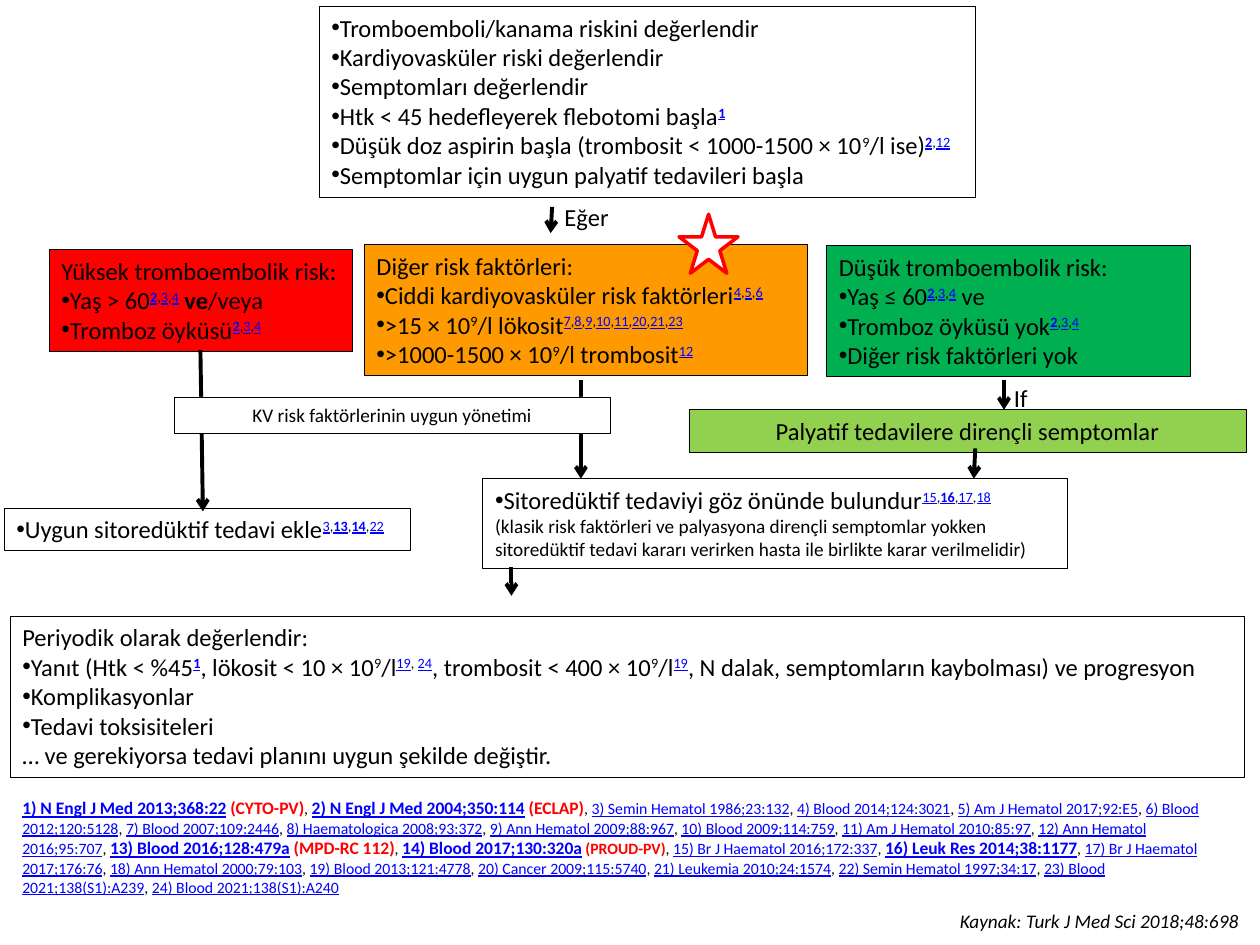
from dataclasses import dataclass

from lxml import etree
from pptx import Presentation
from pptx.dml.color import RGBColor
from pptx.enum.shapes import MSO_CONNECTOR, MSO_SHAPE
from pptx.enum.text import MSO_ANCHOR, MSO_AUTO_SIZE, PP_ALIGN
from pptx.oxml.ns import qn
from pptx.util import Cm, Pt

RECT, STAR = MSO_SHAPE.RECTANGLE, MSO_SHAPE.STAR_5_POINT
STRAIGHT = MSO_CONNECTOR.STRAIGHT
TOP, GROW = MSO_ANCHOR.TOP, MSO_AUTO_SIZE.SHAPE_TO_FIT_TEXT
LEFT, CENTER = PP_ALIGN.LEFT, PP_ALIGN.CENTER

BLACK = RGBColor(0x00, 0x00, 0x00)
WHITE = RGBColor(0xFF, 0xFF, 0xFF)
RED = RGBColor(0xFF, 0x00, 0x00)
ORANGE = RGBColor(0xFF, 0x99, 0x00)
GREEN = RGBColor(0x00, 0xB0, 0x50)
LIGHT_GREEN = RGBColor(0x92, 0xD0, 0x50)
BLUE = RGBColor(0x00, 0x00, 0xFF)

FONT = "Calibri"
BODY, SMALL = 14, 11


@dataclass
class Line:
    """Text split by |: ^ starts a superscript, @ citations, * bold text."""
    text: str
    bullet: bool = True
    size: float = BODY


@dataclass
class Box:
    at: tuple[float, float, float, float]
    lines: list[Line]
    fill: RGBColor | None = WHITE
    align: PP_ALIGN = LEFT
    wrap: bool = True
    italic: bool = False


@dataclass
class Reference:
    text: str
    key: bool = False
    trial: str = ""
    trial_size: float = 10


BOXES = [
    Box((0.08, 10.24, 8.2, 0.86),
        [Line("Uygun sitoredüktif tedavi ekle|@3,13*,14*,22")], wrap=False),
    Box((0.99, 5.03, 6.12, 2.06),
        [Line("Yüksek tromboembolik risk:", False),
         Line("Yaş > 60|@2*,3,4|* ve|/veya"),
         Line("Tromboz öyküsü|@2*,3,4")], RED, wrap=False),
    Box((16.66, 4.95, 7.34, 2.64),
        [Line("Düşük tromboembolik risk:", False),
         Line("Yaş ≤ 60|@2*,3,4| ve"),
         Line("Tromboz öyküsü yok|@2*,3,4"),
         Line("Diğer risk faktörleri yok")], GREEN),
    Box((7.34, 4.93, 8.94, 2.64),
        [Line("Diğer risk faktörleri:", False),
         Line("Ciddi kardiyovasküler risk faktörleri|@4,5,6"),
         Line(">15 × 10|^9|/l lökosit|@7,8,9,10,11,20,21,23"),
         Line(">1000-1500 × 10|^9|/l trombosit|@12")], ORANGE),
    Box((13.89, 8.26, 11.23, 0.86),
        [Line("Palyatif tedavilere dirençli semptomlar", False)],
        LIGHT_GREEN, CENTER),
    Box((6.43, 0.13, 13.23, 3.84),
        [Line("Tromboemboli/kanama riskini değerlendir"),
         Line("Kardiyovasküler riski değerlendir"),
         Line("Semptomları değerlendir"),
         Line("Htk < 45 hedefleyerek flebotomi başla|@1*"),
         Line("Düşük doz aspirin başla (trombosit < 1000-1500 × 10|^9|/l ise)|@2*,12"),
         Line("Semptomlar için uygun palyatif tedavileri başla")], wrap=False),
    Box((11.13, 3.94, 1.42, 0.86), [Line("Eğer", False)], None, wrap=False),
    Box((20.19, 7.59, 0.79, 0.86), [Line("If", False)], None, wrap=False),
    Box((0.2, 12.42, 24.89, 3.25),
        [Line("Periyodik olarak değerlendir:", False),
         Line("Yanıt (Htk < %45|@1*|, lökosit < 10 × 10|^9|/l|@19, 24|"
              ", trombosit < 400 × 10|^9|/l|@19|"
              ", N dalak, semptomların kaybolması) ve progresyon"),
         Line("Komplikasyonlar"),
         Line("Tedavi toksisiteleri"),
         Line("… ve gerekiyorsa tedavi planını uygun şekilde değiştir.", False)]),
    Box((9.73, 9.65, 11.79, 1.8),
        [Line("Sitoredüktif tedaviyi göz önünde bulundur|@15,16*,17,18"),
         Line("(klasik risk faktörleri ve palyasyona dirençli semptomlar yokken "
              "sitoredüktif tedavi kararı verirken hasta ile birlikte karar "
              "verilmelidir)", False, SMALL)]),
    Box((19.1, 18.21, 6.22, 0.74),
        [Line("Kaynak: Turk J Med Sci 2018;48:698", False, SMALL)],
        None, wrap=False, italic=True),
]
MANAGEMENT = Box((3.51, 8, 8.79, 0.74),
                 [Line("KV risk faktörlerinin uygun yönetimi", False, SMALL)],
                 align=CENTER)
REFERENCE_BOX = Box((0.2, 15.95, 24.61, 2.31), [], None)

ARROWS = [
    (4.04, 7.06, 4.09, 10.31),
    (11.13, 4.17, 11.1, 4.7),
    (20.24, 7.67, 20.24, 8.26),
    (10.31, 11.43, 10.31, 12.01),
    (19.66, 9.04, 19.63, 9.65),
    (11.71, 7.67, 11.71, 9.65),
]
STAR_AT = (13.69, 4.32, 1.19, 1.19)

REFERENCES = [
    Reference("N Engl J Med 2013;368:22", True, "CYTO-PV"),
    Reference("N Engl J Med 2004;350:114", True, "ECLAP"),
    Reference("Semin Hematol 1986;23:132"),
    Reference("Blood 2014;124:3021"),
    Reference("Am J Hematol 2017;92:E5"),
    Reference("Blood 2012;120:5128"),
    Reference("Blood 2007;109:2446"),
    Reference("Haematologica 2008;93:372"),
    Reference("Ann Hematol 2009;88:967"),
    Reference("Blood 2009;114:759"),
    Reference("Am J Hematol 2010;85:97"),
    Reference("Ann Hematol 2016;95:707"),
    Reference("Blood 2016;128:479a", True, "MPD-RC 112"),
    Reference("Blood 2017;130:320a", True, "PROUD-PV", 9),
    Reference("Br J Haematol 2016;172:337"),
    Reference("Leuk Res 2014;38:1177", True),
    Reference("Br J Haematol 2017;176:76"),
    Reference("Ann Hematol 2000;79:103"),
    Reference("Blood 2013;121:4778"),
    Reference("Cancer 2009;115:5740"),
    Reference("Leukemia 2010;24:1574"),
    Reference("Semin Hematol 1997;34:17"),
    Reference("Blood 2021;138(S1):A239"),
    Reference("Blood 2021;138(S1):A240"),
]


def add_run(p, text: str, size: float, color: RGBColor = BLACK, bold: bool = False,
            italic: bool = False, underline: bool = False, raised: bool = False) -> None:
    r = p.add_run()
    r.text = text
    font = r.font
    font.name, font.size, font.color.rgb = FONT, Pt(size), color
    font.bold, font.italic, font.underline = bold, italic, underline
    if raised:
        r._r.get_or_add_rPr().set("baseline", "30000")


def add_citations(p, numbers: str, size: float) -> None:
    """Write raised, underlined numbers; a star marks a bold one."""
    for i, item in enumerate(numbers.split(",")):
        number = item.lstrip()
        if i:
            add_run(p, "," + item[:len(item) - len(number)], size, raised=True)
        add_run(p, number.rstrip("*"), size, BLUE, bold=number.endswith("*"),
                underline=True, raised=True)


def write_line(p, line: Line, italic: bool) -> None:
    if line.bullet:
        pPr = p._p.get_or_add_pPr()
        etree.SubElement(pPr, qn("a:buFont"), typeface="Arial")
        etree.SubElement(pPr, qn("a:buChar"), char="•")
    for part in line.text.split("|"):
        if part.startswith("@"):
            add_citations(p, part[1:], line.size)
        elif part.startswith("^"):
            add_run(p, part[1:], line.size, raised=True)
        else:
            add_run(p, part.removeprefix("*"), line.size,
                    bold=part.startswith("*"), italic=italic)


def add_box(s, box: Box):
    at = [Cm(v) for v in box.at]
    if box.fill is None:
        sp = s.shapes.add_textbox(*at)
    else:
        sp = add_outlined(s, RECT, box.at, box.fill, BLACK, 0.25)
    tf = sp.text_frame
    tf.word_wrap, tf.auto_size, tf.vertical_anchor = box.wrap, GROW, TOP
    for i, line in enumerate(box.lines):
        p = tf.add_paragraph() if i else tf.paragraphs[0]
        p.alignment = box.align
        write_line(p, line, box.italic)
    return sp


def add_outlined(s, kind: MSO_SHAPE, at: tuple, fill: RGBColor, line: RGBColor, width: float):
    sp = s.shapes.add_shape(kind, *[Cm(v) for v in at])
    sp.shadow.inherit = False
    sp.fill.solid()
    sp.fill.fore_color.rgb = fill
    sp.line.color.rgb, sp.line.width = line, Pt(width)
    return sp


def add_arrow(s, ends: tuple[float, float, float, float]) -> None:
    line = s.shapes.add_connector(STRAIGHT, *[Cm(v) for v in ends])
    line.line.color.rgb, line.line.width = BLACK, Pt(2.25)
    etree.SubElement(line.line._get_or_add_ln(), qn("a:tailEnd"), type="arrow")
    etree.SubElement(line._element.spPr, qn("a:effectLst"))


def add_references(s) -> None:
    p = add_box(s, REFERENCE_BOX).text_frame.paragraphs[0]
    for i, ref in enumerate(REFERENCES, 1):
        if i > 1:
            add_run(p, ", ", 9)
        add_run(p, f"{i}) {ref.text}", 10 if ref.key else 9, BLUE, ref.key, underline=True)
        if ref.trial:
            add_run(p, f" ({ref.trial})", ref.trial_size, RED, bold=True)


def main() -> None:
    prs = Presentation()
    prs.slide_width, prs.slide_height = Cm(25.4), Cm(19.05)
    s = prs.slides.add_slide(prs.slide_layouts[6])
    for box in BOXES:
        add_box(s, box)
    for ends in ARROWS:
        add_arrow(s, ends)
    add_box(s, MANAGEMENT)
    add_outlined(s, STAR, STAR_AT, WHITE, RED, 2)
    add_references(s)
    prs.save("out.pptx")


if __name__ == "__main__":
    main()
